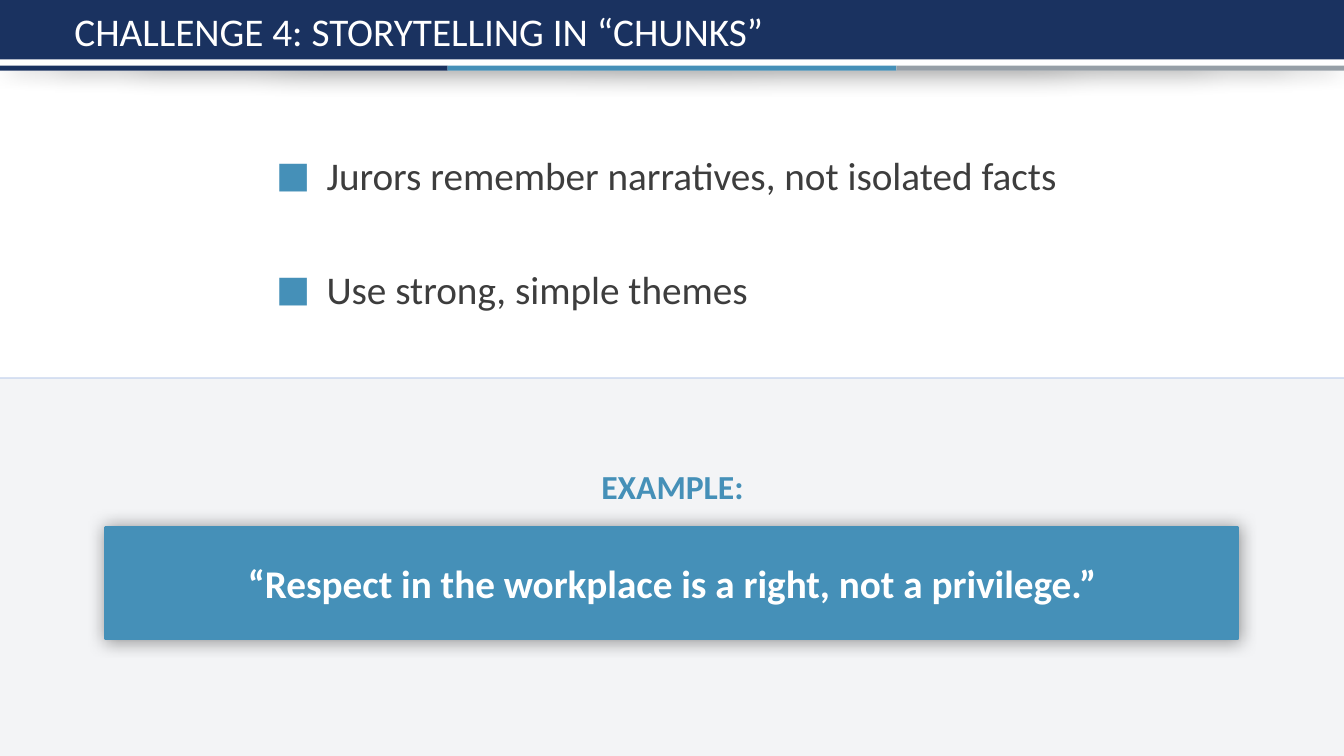
"""Build the slide on storytelling in chunks."""
import dataclasses

import lxml.etree
import pptx
import pptx.dml.color
import pptx.enum.shapes
import pptx.enum.text
import pptx.oxml.ns
import pptx.util

PX = 9144
SLIDE_W, SLIDE_H = 1333, 750
SHAPE = pptx.enum.shapes.MSO_SHAPE
ALIGN = pptx.enum.text.PP_ALIGN
ANCHOR = pptx.enum.text.MSO_ANCHOR


@dataclasses.dataclass(frozen=True)
class Theme:
    """Colours, font and type sizes."""
    navy: str = "1A3260"
    blue: str = "4590B8"
    grey: str = "969FA7"
    white: str = "FFFFFF"
    ink: str = "3D3D3D"
    rule: str = "C2D1EE"
    shadow: str = "000000"
    font: str = "Calibri"
    text_size: int = 28
    label_size: int = 24


THEME = Theme()


def emu(px):
    """Convert px to EMU."""
    return pptx.util.Emu(px * PX)


def rgb(color):
    """Turn a hex string into a colour."""
    return pptx.dml.color.RGBColor.from_string(color)


def add_xml(parent, tag, **attrs):
    """Append a DrawingML element with attributes."""
    el = lxml.etree.SubElement(parent, pptx.oxml.ns.qn(tag))
    for name, value in attrs.items():
        el.set(name, str(value))
    return el


def set_alpha(parent, percent):
    """Make the solid colours under an element translucent."""
    for clr in parent.iter(pptx.oxml.ns.qn("a:srgbClr")):
        add_xml(clr, "a:alpha", val=percent * 1000)


def add_block(s, box, color, shape=SHAPE.RECTANGLE, alpha=None, line_pt=None):
    """Add a filled shape without a shadow."""
    sp = s.shapes.add_shape(shape, *map(emu, box))
    sp.fill.solid()
    sp.fill.fore_color.rgb = rgb(color)
    if alpha is not None:
        set_alpha(sp._element.spPr, alpha)
    if line_pt is None:
        sp.line.fill.background()
    else:
        sp.line.color.rgb = rgb(color)
        sp.line.width = pptx.util.Pt(line_pt)
    sp.shadow.inherit = False
    return sp


def add_shadow(sp, blur_pt, dist_pt=0, angle=0):
    """Give a shape a soft outer shadow."""
    effects = sp._element.spPr.find(pptx.oxml.ns.qn("a:effectLst"))
    shadow = add_xml(effects, "a:outerShdw", blurRad=pptx.util.Pt(blur_pt),
                     dist=pptx.util.Pt(dist_pt), dir=angle * 60000,
                     algn="ctr", rotWithShape=0)
    add_xml(shadow, "a:srgbClr", val=THEME.shadow)
    set_alpha(shadow, 40)


def add_rule(s, y):
    """Add a thin line across the slide."""
    cxn = s.shapes.add_connector(pptx.enum.shapes.MSO_CONNECTOR.STRAIGHT,
                                 0, emu(y), emu(SLIDE_W), emu(y))
    cxn.line.color.rgb = rgb(THEME.rule)
    cxn.line.width = pptx.util.Pt(1)
    set_alpha(cxn._element.spPr, 94)
    add_xml(cxn._element.spPr, "a:effectLst")


def add_text(s, box, lines, color, size=THEME.text_size, bold=False,
             align=ALIGN.LEFT, anchor=ANCHOR.TOP):
    """Add a wrapped text box and return its text frame."""
    tf = s.shapes.add_textbox(*map(emu, box)).text_frame
    tf.word_wrap = True
    tf.vertical_anchor = anchor
    tf.text = "\n".join(lines)
    for p in tf.paragraphs:
        p.alignment = align
        for r in p.runs:
            r.font.name = THEME.font
            r.font.size = pptx.util.Pt(size)
            r.font.bold = bold
            r.font.color.rgb = rgb(color)
    return tf


def add_bullets(s, box, lines):
    """Add a list with square bullets."""
    for p in add_text(s, box, lines, THEME.ink).paragraphs:
        p.space_after = pptx.util.Pt(48)
        ppr = p._p.get_or_add_pPr()
        ppr.set("marL", str(emu(50)))
        ppr.set("indent", str(emu(-50)))
        add_xml(add_xml(ppr, "a:buClr"), "a:srgbClr", val=THEME.blue)
        add_xml(ppr, "a:buSzPct", val=92000)
        add_xml(ppr, "a:buFont", typeface=THEME.font)
        add_xml(ppr, "a:buChar", char="■")


def add_header(s, title):
    """Add the title band, its shadow and the three-colour stripe."""
    glow = add_block(s, (0, 45, SLIDE_W, 24), THEME.white, SHAPE.OVAL)
    add_shadow(glow, 16, 3, 90)
    add_block(s, (0, 0, SLIDE_W, 70), THEME.white)
    add_block(s, (0, 0, SLIDE_W, 59), THEME.navy)
    colors = (THEME.navy, THEME.blue, THEME.grey)
    edges = [round(SLIDE_W * i / len(colors)) for i in range(len(colors) + 1)]
    for left, right, color in zip(edges, edges[1:], colors):
        add_block(s, (left, 65, right - left, 5), color)
    add_text(s, (64, 0, 1206, 59), [title], THEME.white, anchor=ANCHOR.BOTTOM)


def add_example(s, label, quote):
    """Add the lower panel with a labelled quote."""
    middle = SLIDE_H // 2
    add_block(s, (0, middle, SLIDE_W, middle), THEME.navy, alpha=5)
    add_rule(s, middle)
    card = add_block(s, (105, 523, 1123, 111), THEME.blue, line_pt=2)
    add_shadow(card, 12)
    add_text(s, (175, 550, 983, 57), [quote], THEME.white, bold=True,
             align=ALIGN.CENTER)
    add_text(s, (567, 457, 200, 50), [label], THEME.blue, THEME.label_size,
             bold=True, align=ALIGN.CENTER)


def main():
    """Build and save the slide."""
    prs = pptx.Presentation()
    prs.slide_width, prs.slide_height = emu(SLIDE_W), emu(SLIDE_H)
    s = prs.slides.add_slide(prs.slide_layouts[6])
    add_header(s, "CHALLENGE 4: STORYTELLING IN “CHUNKS”")
    add_bullets(s, (264, 145, 805, 215), [
        "Jurors remember narratives, not isolated facts",
        "Use strong, simple themes",
    ])
    add_example(s, "EXAMPLE:",
                "“Respect in the workplace is a right, not a privilege.”")
    prs.save("out.pptx")


if __name__ == "__main__":
    main()
